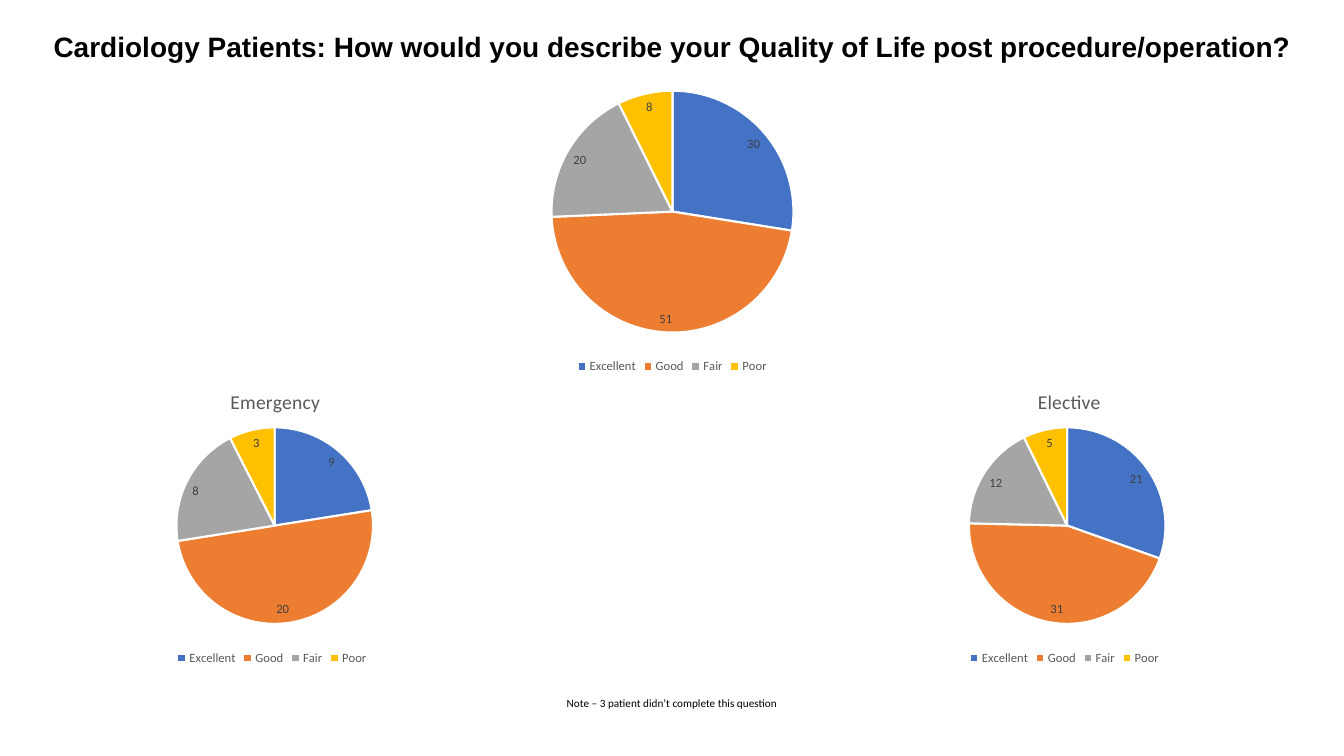
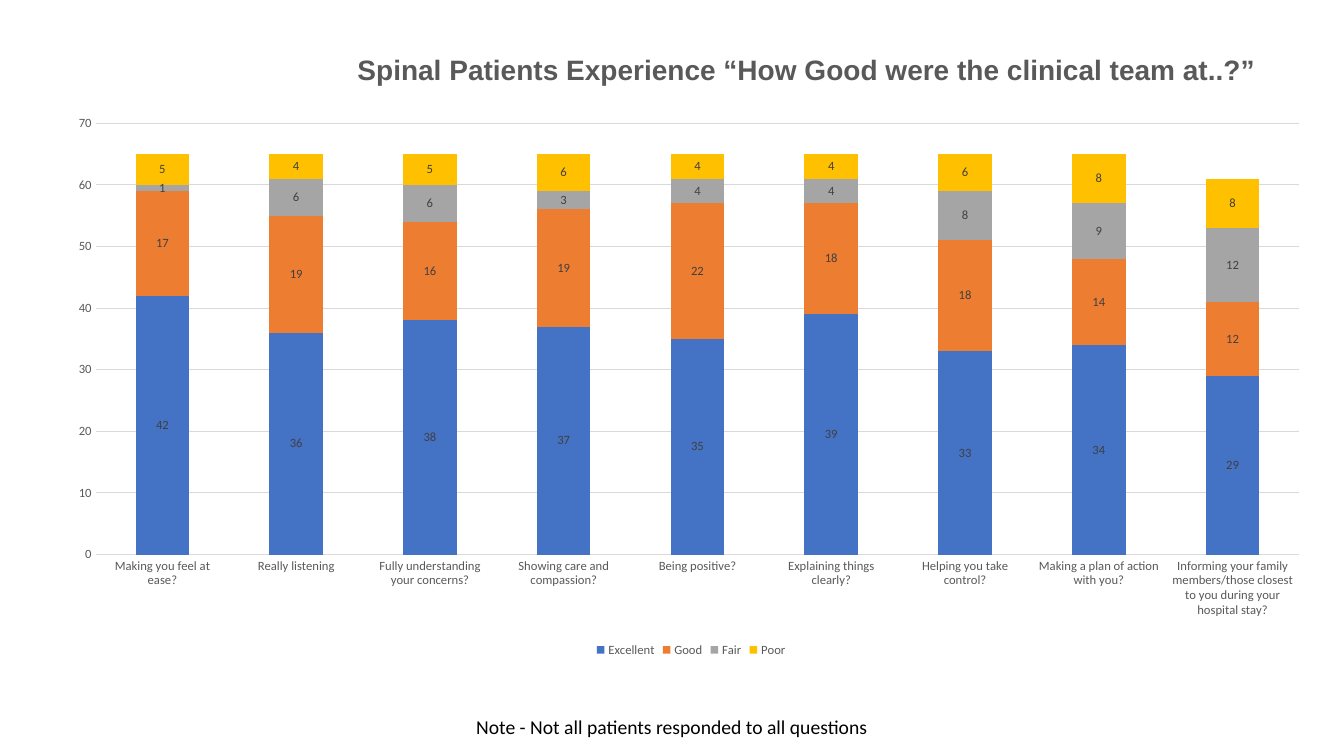
from pptx import Presentation
from pptx.chart.data import CategoryChartData
from pptx.dml.color import RGBColor
from pptx.enum.chart import XL_CHART_TYPE, XL_LABEL_POSITION, XL_LEGEND_POSITION, XL_TICK_MARK
from pptx.enum.text import MSO_ANCHOR, MSO_AUTO_SIZE, PP_ALIGN
from pptx.oxml import parse_xml
from pptx.oxml.ns import nsdecls, qn
from pptx.util import Emu, Pt

BLACK = RGBColor(0x00, 0x00, 0x00)
WHITE = RGBColor(0xFF, 0xFF, 0xFF)
DARK = RGBColor(0x40, 0x40, 0x40)
GREY = RGBColor(0x59, 0x59, 0x59)
RULE = RGBColor(0xD9, 0xD9, 0xD9)
BLUE = RGBColor(0x44, 0x72, 0xC4)
ORANGE = RGBColor(0xED, 0x7D, 0x31)
SILVER = RGBColor(0xA5, 0xA5, 0xA5)
GOLD = RGBColor(0xFF, 0xC0, 0x00)
HUES = (BLUE, ORANGE, SILVER, GOLD)
RATINGS = ("Excellent", "Good", "Fair", "Poor")
SCALE = 9144


def px(*nums):
    return [Emu(num * SCALE) for num in nums]


class Deck:
    head, body = "Arial", "Calibri"

    def __init__(self, wide, high):
        self.prs = Presentation()
        self.prs.slide_width, self.prs.slide_height = px(wide, high)
        self.slide = None

    def style(self, font, size, color, name=None, bold=False):
        font.name, font.size, font.bold = name or self.body, Pt(size), bold
        font.color.rgb = color

    def page(self, text, box, color):
        self.slide = self.prs.slides.add_slide(self.prs.slide_layouts[5])
        title = self.slide.shapes.title
        title.left, title.top, title.width, title.height = px(*box)
        frame = title.text_frame
        frame.text = text
        frame.word_wrap = True
        frame.auto_size = MSO_AUTO_SIZE.NONE
        frame.vertical_anchor = MSO_ANCHOR.MIDDLE
        line = frame.paragraphs[0]
        line.alignment = PP_ALIGN.CENTER
        self.style(line.runs[0].font, 20, color, self.head, True)

    def note(self, text, box, size):
        frame = self.slide.shapes.add_textbox(*px(*box)).text_frame
        frame.text = text
        frame.word_wrap = False
        frame.auto_size = MSO_AUTO_SIZE.SHAPE_TO_FIT_TEXT
        line = frame.paragraphs[0]
        line.alignment = PP_ALIGN.CENTER
        self.style(line.runs[0].font, size, BLACK)

    def place(self, owner, spot, at):
        old = owner.find(qn("c:layout"))
        if old is not None:
            owner.remove(old)
        inner = '<c:layoutTarget val="inner"/>' if len(spot) == 4 else ""
        modes = '<c:xMode val="edge"/><c:yMode val="edge"/>'
        sides = "".join(f'<c:{key} val="{val}"/>' for key, val in zip("xywh", spot))
        owner.insert(at, parse_xml(
            f'<c:layout {nsdecls("c")}><c:manualLayout>{inner}{modes}{sides}'
            "</c:manualLayout></c:layout>"))

    def chart(self, kind, box, cats, rows, area, where):
        data = CategoryChartData()
        data.categories = cats
        for name, vals in rows:
            data.add_series(name, vals)
        chart = self.slide.shapes.add_chart(kind, *px(*box), data).chart
        self.style(chart.font, 10, BLACK)
        chart.has_title = False
        chart.has_legend = True
        chart.legend.position = XL_LEGEND_POSITION.BOTTOM
        chart.legend.include_in_layout = False
        self.style(chart.legend.font, 9, GREY)
        self.place(chart.element.find(qn("c:chart")).find(qn("c:plotArea")), area, 0)
        plot = chart.plots[0]
        plot.has_data_labels = True
        labels = plot.data_labels
        labels.show_value = True
        labels.show_percentage = False
        labels.position = where
        self.style(labels.font, 9, DARK)
        return chart

    def pie(self, vals, box, area, title=None, left=0):
        chart = self.chart(XL_CHART_TYPE.PIE, box, RATINGS, [("Series 1", vals)],
                           area, XL_LABEL_POSITION.INSIDE_END)
        chart.plots[0].vary_by_categories = True
        for num, hue in enumerate(HUES):
            form = chart.series[0].points[num].format
            form.fill.solid()
            form.fill.fore_color.rgb = hue
            form.line.color.rgb = WHITE
            form.line.width = Pt(1.5)
        if title:
            frame = chart.chart_title.text_frame
            frame.text = title
            self.style(frame.paragraphs[0].runs[0].font, 14, GREY)
            self.place(chart.chart_title.element, (left, 0.06), 1)

    def stack(self, cats, rows, box, area):
        chart = self.chart(XL_CHART_TYPE.COLUMN_STACKED, box, cats, rows,
                           area, XL_LABEL_POSITION.CENTER)
        plot = chart.plots[0]
        plot.vary_by_categories = False
        plot.gap_width, plot.overlap = 150, 100
        for row, hue in zip(chart.series, HUES):
            row.format.fill.solid()
            row.format.fill.fore_color.rgb = hue
        base, side = chart.category_axis, chart.value_axis
        for axis in (base, side):
            axis.major_tick_mark = axis.minor_tick_mark = XL_TICK_MARK.NONE
            self.style(axis.tick_labels.font, 9, GREY)
        side.minimum_scale, side.maximum_scale, side.major_unit = 0, 70, 10
        side.format.line.fill.background()
        side.has_major_gridlines = True
        for form in (base.format, side.major_gridlines.format):
            form.line.color.rgb = RULE
            form.line.width = Pt(0.75)


def main():
    deck = Deck(1333, 750)

    deck.page("Cardiology Patients: How would you describe your Quality of Life "
              "post procedure/operation?", (20, 24, 1294, 44), BLACK)
    deck.note("Note – 3 patient didn’t complete this question", (551, 686, 231, 24), 8)
    small = (0.31, 0.2, 0.39, 0.65)
    deck.pie((30, 51, 20, 8), (417, 75, 500, 300), (0.26, 0.05, 0.48, 0.8))
    deck.pie((21, 31, 12, 5), (806, 364, 500, 300), small, "Elective", 0.44)
    deck.pie((9, 20, 8, 3), (20, 364, 500, 300), small, "Emergency", 0.41)

    deck.page("Spinal Patients Experience “How Good were the clinical team at..?”",
              (330, 47, 940, 44), GREY)
    deck.note("Note - Not all patients responded to all questions",
              (460, 704, 413, 34), 14)
    topics = ("Making you feel at ease?", "Really listening",
              "Fully understanding your concerns?", "Showing care and compassion?",
              "Being positive?", "Explaining things clearly?",
              "Helping you take control?", "Making a plan of action with you?",
              "Informing your family members/those closest to you during your "
              "hospital stay?")
    scores = ((42, 36, 38, 37, 35, 39, 33, 34, 29),
              (17, 19, 16, 19, 22, 18, 18, 14, 12),
              (1, 6, 6, 3, 4, 4, 8, 9, 12),
              (5, 4, 5, 6, 4, 4, 6, 8, 8))
    deck.stack(topics, zip(RATINGS, scores), (57, 100, 1257, 556),
               (0.03, 0.04, 0.95, 0.77))

    deck.prs.save("out.pptx")


if __name__ == "__main__":
    main()
